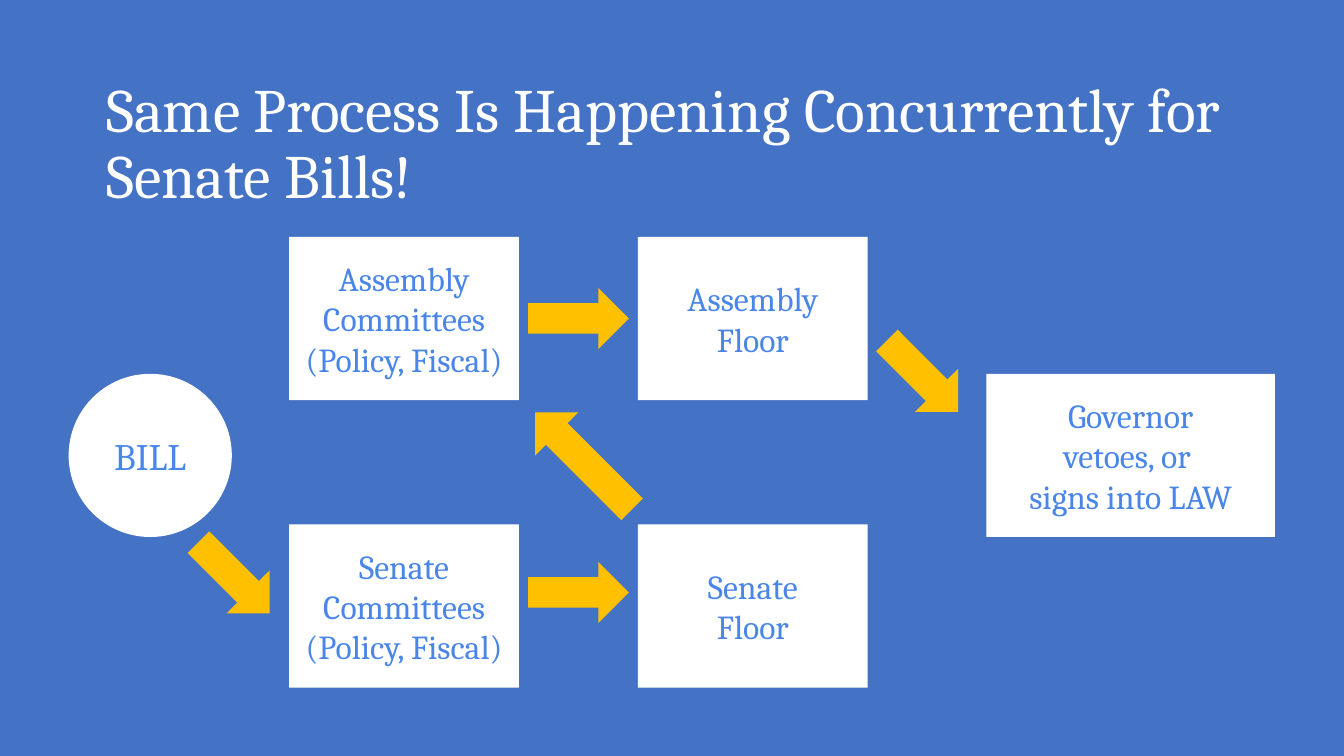
from dataclasses import dataclass

from pptx import Presentation
from pptx.dml.color import RGBColor
from pptx.enum.shapes import MSO_SHAPE
from pptx.enum.text import MSO_ANCHOR, MSO_AUTO_SIZE, PP_ALIGN
from pptx.util import Pt


@dataclass(frozen=True)
class Theme:
    font: str = "Cambria"
    background: RGBColor = RGBColor(0x44, 0x72, 0xC4)
    white: RGBColor = RGBColor(0xFF, 0xFF, 0xFF)
    stage_text: RGBColor = RGBColor(0x4A, 0x86, 0xE8)
    arrow: RGBColor = RGBColor(0xFF, 0xC0, 0x00)
    title_size: float = 44
    bill_size: float = 26.7
    stage_size: float = 24
    inset: float = 9.6


THEME = Theme()

TITLE = "Same Process Is Happening Concurrently for Senate Bills!"
COMMITTEES = ["Committees", "(Policy, Fiscal)"]
CHAMBERS = ["Assembly", "Senate"]
BILL = ["BILL"]
GOVERNOR = ["Governor", "vetoes, or ", "signs into LAW"]

# Points
SLIDE_SIZE = (960, 540)
TITLE_BOX = (66.2, 46.8, 836.6, 60.5)
STAGE_HEIGHT = 116.6
CHAMBER_WIDTH = 164.2
GOVERNOR_WIDTH = 206
BILL_LEFT, COMMITTEE_LEFT, FLOOR_LEFT, GOVERNOR_LEFT = 49, 206.5, 455.6, 704.6
CHAMBER_TOPS = [169.2, 374.5]
MIDDLE_TOP = 267
ARROW_LENGTH, ARROW_THICKNESS = 72, 43.5

# Centre x, centre y, length, clockwise rotation
ARROWS = [
    (167.2, 412.7, ARROW_LENGTH, 45),    # bill to Senate committees
    (413.2, 423.2, ARROW_LENGTH, 0),     # Senate committees to floor
    (413.2, 227.5, ARROW_LENGTH, 0),     # Assembly committees to floor
    (416.9, 329.2, 98, 225),             # Senate floor to Assembly committees
    (659, 268.7, ARROW_LENGTH, 45),      # Assembly floor to Governor
]


def style_run(run, size, color):
    run.font.name = THEME.font
    run.font.size = Pt(size)
    run.font.color.rgb = color


def set_insets(frame):
    frame.margin_left = frame.margin_right = Pt(THEME.inset)
    frame.margin_top = frame.margin_bottom = Pt(THEME.inset)
    frame.word_wrap = True


def add_flat_shape(slide, kind, left, top, width, height, color):
    shape = slide.shapes.add_shape(kind, Pt(left), Pt(top), Pt(width), Pt(height))
    shape.shadow.inherit = False
    shape.fill.solid()
    shape.fill.fore_color.rgb = color
    shape.line.fill.background()
    return shape


def add_stage(slide, lines, left, top, width,
              kind=MSO_SHAPE.RECTANGLE, size=THEME.stage_size):
    """Add a white step of the process with one centred paragraph per line."""
    stage = add_flat_shape(slide, kind, left, top, width, STAGE_HEIGHT, THEME.white)
    frame = stage.text_frame
    set_insets(frame)
    frame.vertical_anchor = MSO_ANCHOR.MIDDLE
    for index, line in enumerate(lines):
        paragraph = frame.add_paragraph() if index else frame.paragraphs[0]
        paragraph.alignment = PP_ALIGN.CENTER
        run = paragraph.add_run()
        run.text = line
        style_run(run, size, THEME.stage_text)


def add_arrow(slide, center_x, center_y, length, rotation):
    arrow = add_flat_shape(
        slide, MSO_SHAPE.RIGHT_ARROW, center_x - length / 2,
        center_y - ARROW_THICKNESS / 2, length, ARROW_THICKNESS, THEME.arrow)
    arrow.rotation = rotation


def place_title(slide):
    title = slide.shapes.title
    title.left, title.top, title.width, title.height = map(Pt, TITLE_BOX)
    frame = title.text_frame
    set_insets(frame)
    frame.auto_size = MSO_AUTO_SIZE.NONE
    frame.vertical_anchor = MSO_ANCHOR.TOP
    paragraph = frame.paragraphs[0]
    paragraph.alignment = PP_ALIGN.LEFT
    paragraph.line_spacing = 0.9
    run = paragraph.add_run()
    run.text = TITLE
    style_run(run, THEME.title_size, THEME.white)


def main():
    deck = Presentation()
    deck.slide_width, deck.slide_height = map(Pt, SLIDE_SIZE)
    slide = deck.slides.add_slide(deck.slide_layouts.get_by_name("Title Only"))
    slide.background.fill.solid()
    slide.background.fill.fore_color.rgb = THEME.background

    place_title(slide)
    add_stage(slide, BILL, BILL_LEFT, MIDDLE_TOP, STAGE_HEIGHT,
              MSO_SHAPE.OVAL, THEME.bill_size)
    for chamber, top in zip(CHAMBERS, CHAMBER_TOPS):
        add_stage(slide, [chamber, *COMMITTEES], COMMITTEE_LEFT, top, CHAMBER_WIDTH)
        add_stage(slide, [chamber, "Floor"], FLOOR_LEFT, top, CHAMBER_WIDTH)
    add_stage(slide, GOVERNOR, GOVERNOR_LEFT, MIDDLE_TOP, GOVERNOR_WIDTH)
    for arrow in ARROWS:
        add_arrow(slide, *arrow)

    deck.save("out.pptx")


if __name__ == "__main__":
    main()
